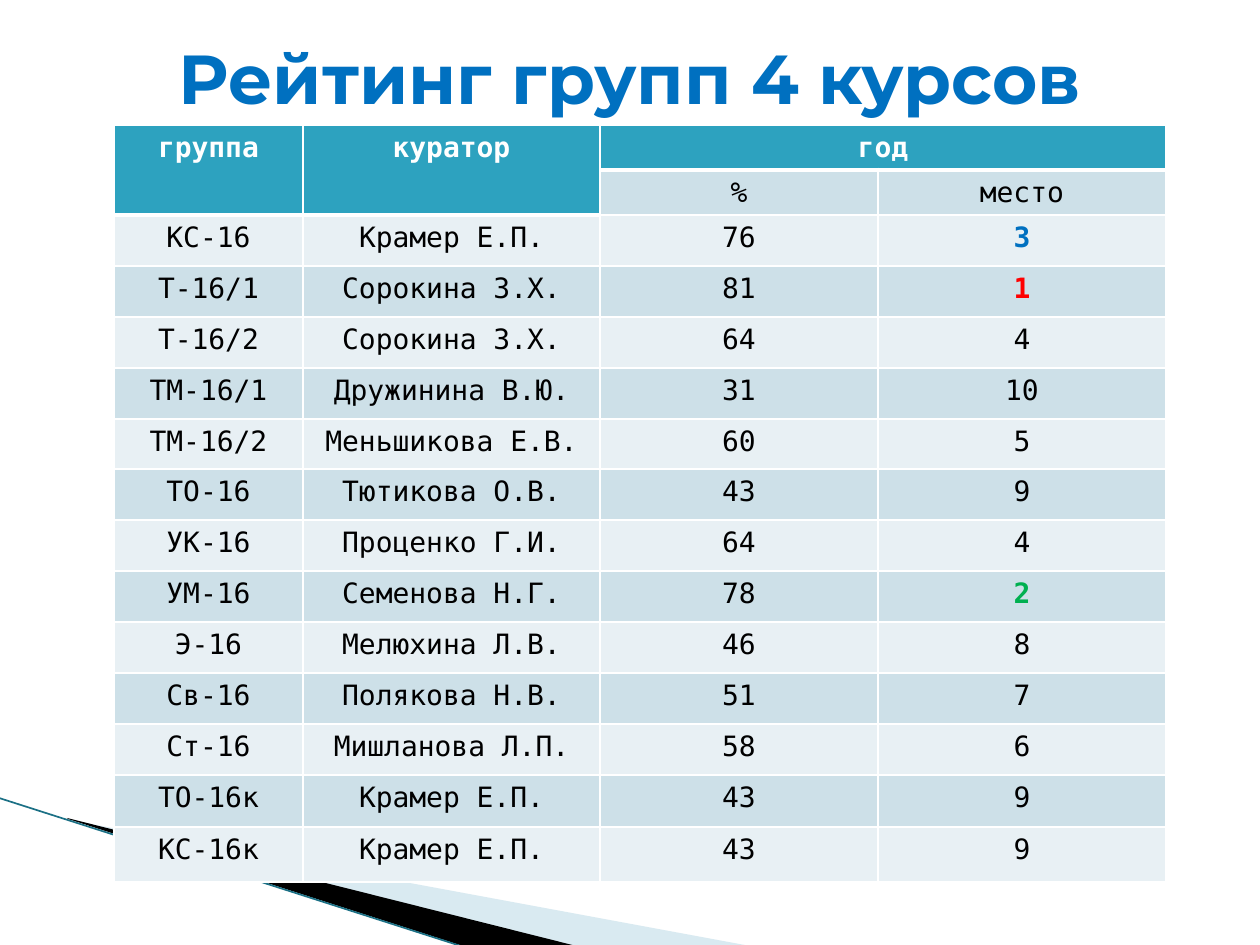
"""Build a slide with the rating table of the fourth-year groups."""
from lxml.etree import SubElement
from pptx import Presentation
from pptx.dml.color import RGBColor
from pptx.enum.shapes import MSO_CONNECTOR
from pptx.enum.text import MSO_ANCHOR, PP_ALIGN
from pptx.oxml import parse_xml
from pptx.oxml.ns import nsdecls, qn
from pptx.util import Pt

PX = 914400 / 126
WHITE = RGBColor(255, 255, 255)
BLACK = RGBColor(0, 0, 0)
TEAL = RGBColor(0x2D, 0xA2, 0xBF)
DARK = RGBColor(0xCD, 0xE0, 0xE8)
LIGHT = RGBColor(0xE8, 0xF0, 0xF4)
SKY = RGBColor(0xA0, 0xCB, 0xDC)
LINE = RGBColor(0x1B, 0x70, 0x85)
BLUE = RGBColor(0, 0x70, 0xC0)
RED = RGBColor(255, 0, 0)
GREEN = RGBColor(0, 0xB0, 0x50)
MEDALS = {"1": RED, "2": GREEN, "3": BLUE}

ROWS = [
    ("группа", "куратор", "год", ""),
    ("", "", "%", "место"),
    ("КС-16", "Крамер Е.П.", "76", "3"),
    ("Т-16/1", "Сорокина З.Х.", "81", "1"),
    ("Т-16/2", "Сорокина З.Х.", "64", "4"),
    ("ТМ-16/1", "Дружинина В.Ю.", "31", "10"),
    ("ТМ-16/2", "Меньшикова Е.В.", "60", "5"),
    ("ТО-16", "Тютикова О.В.", "43", "9"),
    ("УК-16", "Проценко Г.И.", "64", "4"),
    ("УМ-16", "Семенова Н.Г.", "78", "2"),
    ("Э-16", "Мелюхина Л.В.", "46", "8"),
    ("Св-16", "Полякова Н.В.", "51", "7"),
    ("Ст-16", "Мишланова Л.П.", "58", "6"),
    ("ТО-16к", "Крамер Е.П.", "43", "9"),
    ("КС-16к", "Крамер Е.П.", "43", "9"),
]
WIDTHS = [189, 297, 278, 288]
HEIGHTS = [45, 44] + [51] * 4 + [50] + [51] * 6 + [52, 55]


def px(*vals):
    return [round(v * PX) for v in vals]


def style(frame, font, size, color, bold):
    para = frame.paragraphs[0]
    para.alignment = PP_ALIGN.CENTER
    for run in para.runs:
        run.font.name = font
        run.font.size = Pt(size)
        run.font.bold = bold
        run.font.color.rgb = color


deck = Presentation()
deck.slide_width, deck.slide_height = px(1260, 945)
slide = deck.slides.add_slide(deck.slide_layouts[6])
shapes = slide.shapes

WEDGES = [
    (SKY, (98, 689, 524, 199), [(69, 820), (750, 946), (575, 946), (69, 819)]),
    (BLACK, (-8, 798, 524, 116), [(67, 818), (576, 946), (469, 948), (68, 819)]),
]
for color, box, points in WEDGES:
    pen = shapes.build_freeform(*points[0], scale=PX)
    pen.add_line_segments(points[1:], close=True)
    wedge = pen.convert_to_shape()
    wedge.shadow.inherit = False
    wedge.fill.solid()
    wedge.fill.fore_color.rgb = color
    wedge.line.fill.background()
    wedge.left, wedge.top, wedge.width, wedge.height = px(*box)
    track = wedge._element.find(".//" + qn("a:path"))
    track.set("w", str(box[2]))
    track.set("h", str(box[3]))
    for dot, (x, y) in zip(track.iter(qn("a:pt")), points):
        dot.set("x", str(x - box[0]))
        dot.set("y", str(y - box[1]))
    if color == SKY:
        tint = wedge._element.spPr.find(".//" + qn("a:srgbClr"))
        SubElement(tint, qn("a:alpha"), val="40000")

edge = shapes.add_connector(MSO_CONNECTOR.STRAIGHT, *px(-1, 798, 467, 948))
edge.line.color.rgb = LINE
edge.line.width = Pt(0.95)
SubElement(edge._element.spPr, qn("a:effectLst"))

grid = shapes.add_table(
    len(ROWS), len(WIDTHS), *px(114, 125, sum(WIDTHS), sum(HEIGHTS))
).table
for col, width in zip(grid.columns, px(*WIDTHS)):
    col.width = width
for row, height in zip(grid.rows, px(*HEIGHTS)):
    row.height = height

for r, texts in enumerate(ROWS):
    for c, text in enumerate(texts):
        cell = grid.cell(r, c)
        head = r == 0 or (r == 1 and c < 2)
        cell.fill.solid()
        cell.fill.fore_color.rgb = TEAL if head else DARK if r % 2 else LIGHT
        medal = MEDALS.get(text) if c == 3 else None
        cell.text_frame.text = text
        color = WHITE if head else medal or BLACK
        style(cell.text_frame, "DejaVu Sans Mono", 16, color, bool(head or medal))
        props = cell._tc.get_or_add_tcPr()
        for i, side in enumerate("LRTB"):
            width = Pt(3 if head and side == "B" else 1)
            props.insert(i, parse_xml(
                f'<a:ln{side} {nsdecls("a")} w="{width}"><a:solidFill>'
                f'<a:srgbClr val="{WHITE}"/></a:solidFill></a:ln{side}>'))

for c in range(2):
    grid.cell(0, c).merge(grid.cell(1, c))
grid.cell(0, 2).merge(grid.cell(0, 3))

title = shapes.add_textbox(*px(63, 38, 1134, 77)).text_frame
title.word_wrap = True
title.vertical_anchor = MSO_ANCHOR.MIDDLE
title.text = "Рейтинг групп 4 курсов"
style(title, "Montserrat", 39.6, BLUE, True)

deck.save("out.pptx")
